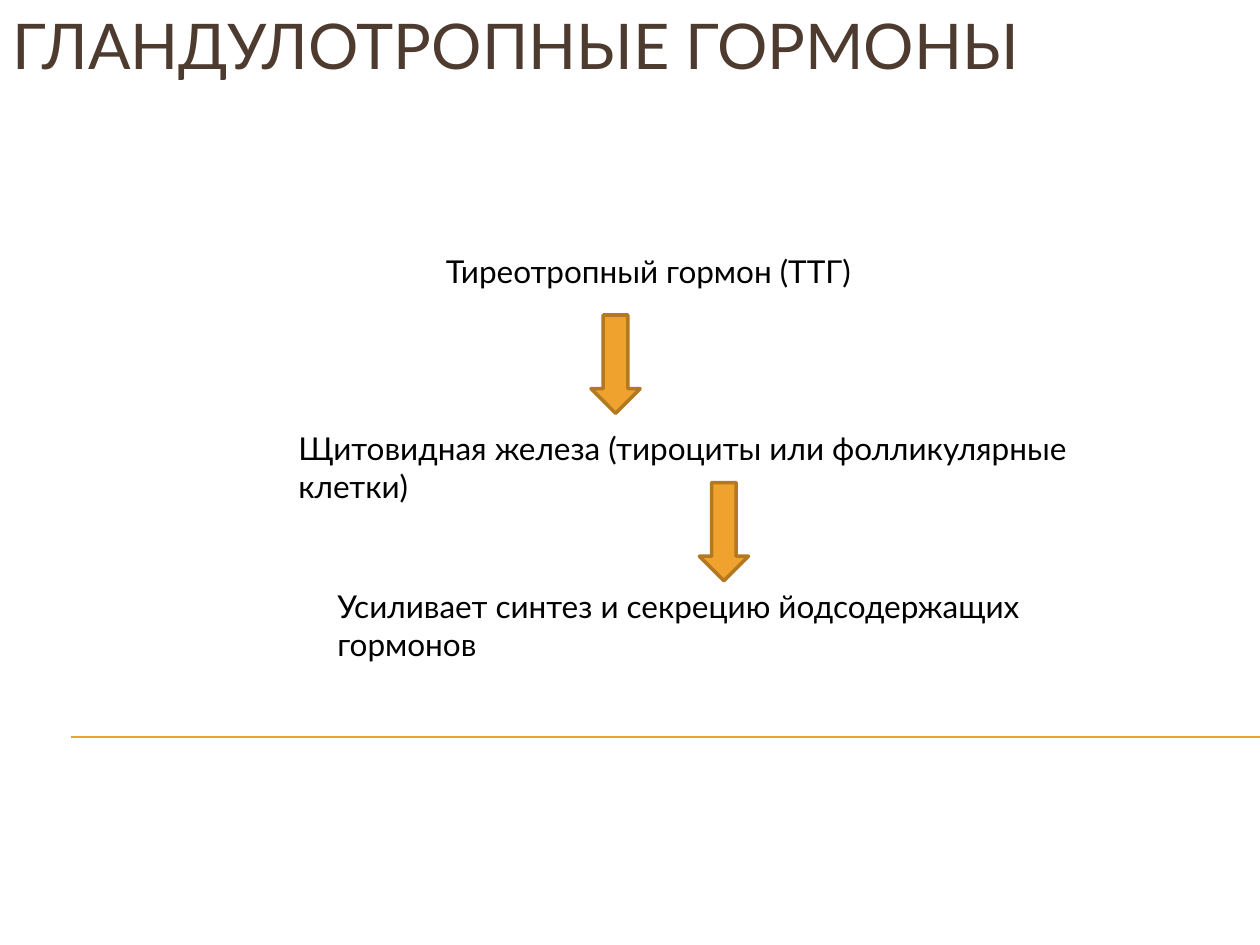
from dataclasses import dataclass

from lxml.etree import SubElement as Sub
from pptx import Presentation as Deck
from pptx.dml.color import RGBColor as Rgb
from pptx.enum.shapes import MSO_CONNECTOR as Link, MSO_SHAPE as Form
from pptx.enum.text import MSO_ANCHOR as Anchor, MSO_AUTO_SIZE as Fit, PP_ALIGN as Align
from pptx.oxml.ns import qn
from pptx.util import Inches, Pt

COLS, ROWS = 100, 75


@dataclass(frozen=True)
class Theme:
    font: str = "Lato"
    ink: str = "000000"
    head: str = "4E3B30"
    gold: str = "F0A22E"
    edge: str = "B27822"
    big: int = 36
    body: int = 18
    thin: float = 0.75
    thick: float = 2


LOOK = Theme()


def grid(deck, *cells):
    units = (deck.slide_width / COLS, deck.slide_height / ROWS)
    return [round(cell * units[i % 2]) for i, cell in enumerate(cells)]


def write(frame, text, size, tone):
    line = frame.paragraphs[0]
    line.alignment = Align.LEFT
    run = line.add_run()
    run.text = text
    run.font.name = LOOK.font
    run.font.size = Pt(size)
    run.font.color.rgb = Rgb.from_string(tone)


def add_title(deck, slide, text):
    title = slide.shapes.title
    title.left, title.top, title.width, title.height = grid(deck, 0, 0, COLS, 16.4)
    frame = title.text_frame
    frame.vertical_anchor = Anchor.TOP
    frame.auto_size = Fit.NONE
    frame.word_wrap = True
    write(frame, text, LOOK.big, LOOK.head)


def add_label(deck, slide, cells, text, wrap=False):
    frame = slide.shapes.add_textbox(*grid(deck, *cells)).text_frame
    frame.word_wrap = wrap
    frame.auto_size = Fit.SHAPE_TO_FIT_TEXT
    write(frame, text, LOOK.body, LOOK.ink)


def add_arrow(deck, slide, col, row):
    arrow = slide.shapes.add_shape(Form.DOWN_ARROW, *grid(deck, col, row, 3.9, 7.8))
    arrow.shadow.inherit = False
    arrow.fill.solid()
    arrow.fill.fore_color.rgb = Rgb.from_string(LOOK.gold)
    arrow.line.color.rgb = Rgb.from_string(LOOK.edge)
    arrow.line.width = Pt(LOOK.thick)


def add_rule(deck, slide, row):
    rule = slide.shapes.add_connector(Link.STRAIGHT, *grid(deck, 5.6, row, COLS, row))
    rule.line.color.rgb = Rgb.from_string(LOOK.gold)
    rule.line.width = Pt(LOOK.thin)
    Sub(rule._element.spPr, qn("a:effectLst"))


def main():
    deck = Deck()
    deck.slide_width, deck.slide_height = Inches(10), Inches(7.5)
    slide = deck.slides.add_slide(deck.slide_layouts[5])
    add_rule(deck, slide, 58.5)
    add_label(deck, slide, (34.4, 19.5, 34.7, 4), "Тиреотропный гормон (ТТГ)")
    add_label(deck, slide, (22.7, 33.6, 72.3, 4),
              "Щитовидная железа (тироциты или фолликулярные клетки)")
    add_label(deck, slide, (25.8, 46.1, 57, 7.1),
              "Усиливает синтез и секрецию йодсодержащих гормонов", wrap=True)
    add_title(deck, slide, "ГЛАНДУЛОТРОПНЫЕ ГОРМОНЫ")
    for col, row in ((46.9, 25), (55.5, 38.3)):
        add_arrow(deck, slide, col, row)
    deck.save("out.pptx")


if __name__ == "__main__":
    main()
